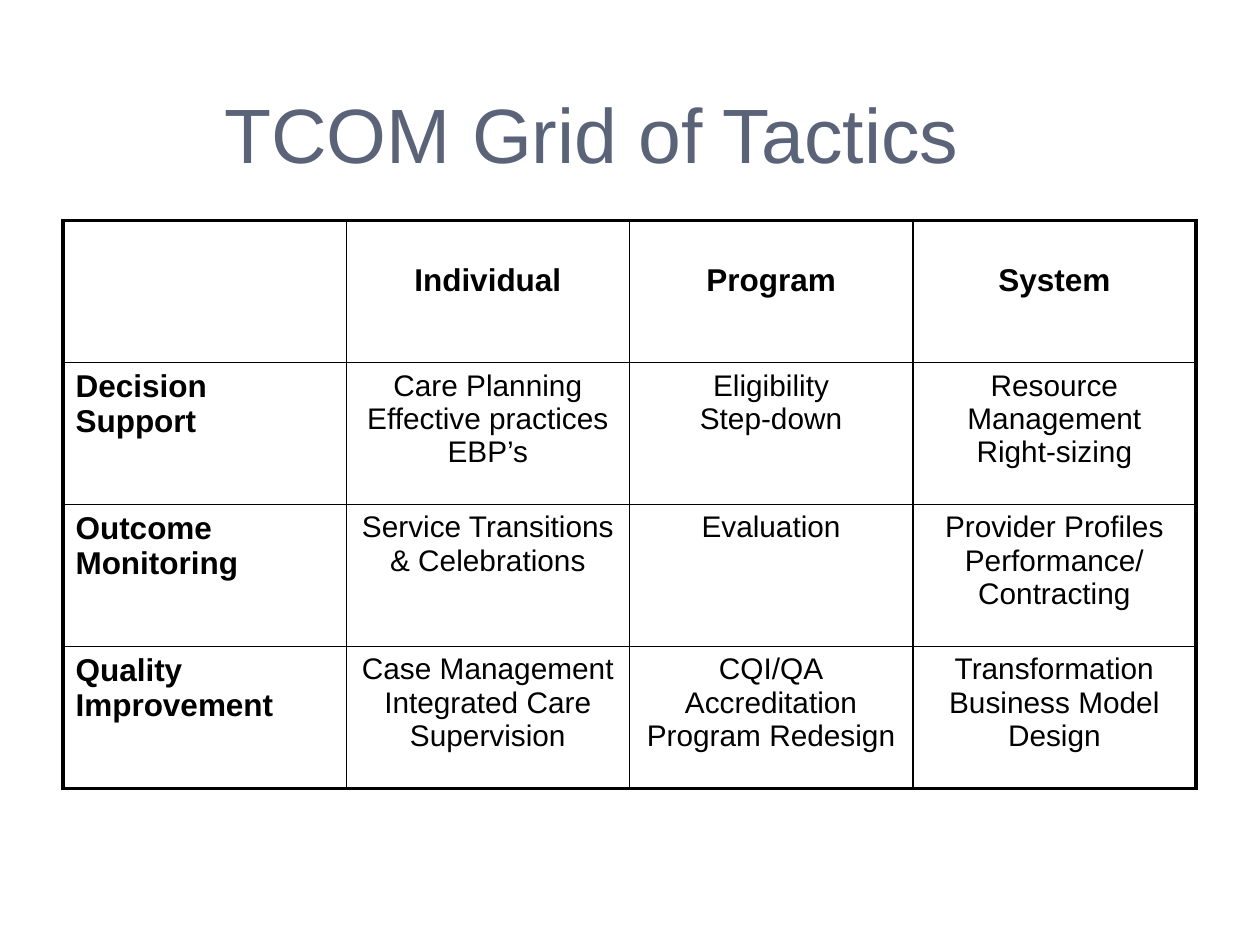
"""Build the TCOM grid of tactics slide."""
from pptx import Presentation, oxml
from pptx import util as u
from pptx.dml import color
from pptx.enum import text
from pptx.oxml import ns

HUES = {"ink": "000000", "title": "5A6378"}
FORMS = {
    "title": {"size": u.Pt(44), "bold": False, "name": "Arial"},
    "head": {"size": u.Pt(18), "bold": True, "name": "Arial"},
    "body": {"size": u.Pt(17), "bold": False, "name": "Arial"},
}
GRID = [
    ["", "Individual", "Program", "System"],
    ["Decision Support", "Care Planning\nEffective practices\nEBP’s",
     "Eligibility\nStep-down", "Resource Management\nRight-sizing"],
    ["Outcome\nMonitoring", "Service Transitions & Celebrations",
     "Evaluation", "Provider Profiles\nPerformance/ Contracting"],
    ["Quality Improvement", "Case Management\nIntegrated Care\nSupervision",
     "CQI/QA\nAccreditation\nProgram Redesign",
     "Transformation\nBusiness Model Design"],
]
SIDE = len(GRID)
WIDE, HIGH = u.Cm(5.71), u.Cm(2.86)


def write(frame, words, form, hue, align):
    frame.text = words
    for para in frame.paragraphs:
        para.alignment = align
        for run in para.runs:
            for key, val in FORMS[form].items():
                setattr(run.font, key, val)
            run.font.color.rgb = color.RGBColor.from_string(HUES[hue])


def edge(cell, tag, width):
    props = cell._tc.get_or_add_tcPr()
    line = oxml.parse_xml(
        f'<a:{tag} {ns.nsdecls("a")} w="{u.Pt(width)}"><a:solidFill>'
        f'<a:srgbClr val="{HUES["ink"]}"/></a:solidFill></a:{tag}>')
    props.append(line)


deck = Presentation()
deck.slide_width, deck.slide_height = u.Cm(25.4), u.Cm(19.05)
slide = deck.slides.add_slide(deck.slide_layouts[6])

table = slide.shapes.add_table(
    SIDE, SIDE, u.Cm(1.27), u.Cm(4.45), WIDE * SIDE, HIGH * SIDE).table
table.first_row = table.horz_banding = False
for col in table.columns:
    col.width = WIDE
for row in table.rows:
    row.height = HIGH

for r, row in enumerate(GRID):
    for c, words in enumerate(row):
        cell = table.cell(r, c)
        form = "body" if r and c else "head"
        align = text.PP_ALIGN.CENTER if c else text.PP_ALIGN.LEFT
        write(cell.text_frame, words, form, "ink", align)
        if r == 0:
            cell.margin_top = u.Cm(0.85)
        rims = {"lnL": c == 0, "lnR": c == SIDE - 1,
                "lnT": r == 0, "lnB": r == SIDE - 1}
        for tag, rim in rims.items():
            edge(cell, tag, 2.25 if rim else 1)
        cell.fill.background()

title = slide.shapes.add_textbox(
    u.Cm(2.11), u.Cm(1.47), u.Cm(22.43), u.Cm(2.11)).text_frame
look = {"word_wrap": True, "margin_left": u.Cm(2.41), "margin_top": u.Cm(0.28)}
for key, val in look.items():
    setattr(title, key, val)
write(title, "TCOM Grid of Tactics", "title", "title", text.PP_ALIGN.LEFT)

deck.save("out.pptx")
